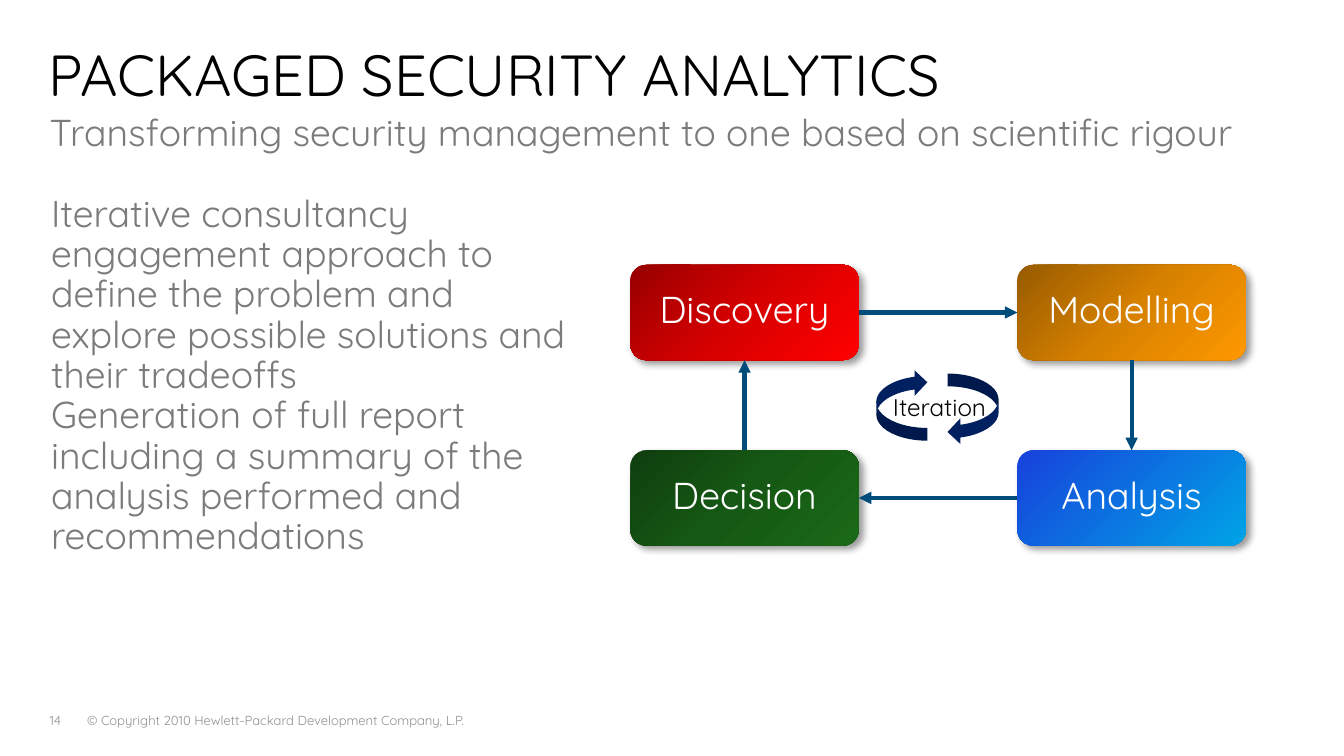
import pptx
import pptx.dml.color
import pptx.enum.shapes
import pptx.enum.text
import pptx.oxml
import pptx.oxml.ns
import pptx.util

EMU_PER_PX = 4572  # 200 px to the inch
FONT = "Quicksand"
COLOURS = {
    "title": "000000",
    "body": "7B7B79",
    "footer": "919191",
    "label": "FFFFFF",
    "connector": "004C7B",
    "cycle": "002060",
}
LINEAR = '<a:lin ang="2700000" scaled="0"/>'
RADIAL = '<a:path path="circle"><a:fillToRect l="100000" t="100000"/></a:path>'
BOX_WIDTH, BOX_HEIGHT = 340, 142
LEFT, RIGHT, UPPER, LOWER = 938, 1514, 394, 670
# Name, left, top, gradient colours, gradient direction; in cycle order
STAGES = [
    ("Discovery", LEFT, UPPER, ["970000", "D70000", "FF0000"], LINEAR),
    ("Modelling", RIGHT, UPPER, ["975B00", "D78100", "FF9900"], LINEAR),
    ("Analysis", RIGHT, LOWER, ["00A4E6", "1742DB"], RADIAL),
    ("Decision", LEFT, LOWER, ["0F3E0E", "165914", "1A6918"], LINEAR),
]
# Sides where each arrow leaves and arrives: 0 top, 1 left, 2 bottom, 3 right
ARROW_SIDES = [(3, 1), (2, 0), (1, 3), (0, 2)]


def px(*lengths):
    return [pptx.util.Emu(length * EMU_PER_PX) for length in lengths]


def rgb(name):
    return pptx.dml.color.RGBColor.from_string(COLOURS[name])


def drawing_xml(tag, content="", attributes=""):
    namespace = pptx.oxml.ns.nsdecls("a")
    return pptx.oxml.parse_xml(f"<a:{tag} {namespace} {attributes}>{content}</a:{tag}>")


def write_text(shape, text, size, colour, align="LEFT", anchor="TOP",
               line_spacing=1.0, wrap=True, plain_list=False):
    frame = shape.text_frame
    frame.word_wrap = wrap
    frame.auto_size = pptx.enum.text.MSO_AUTO_SIZE.NONE
    frame.vertical_anchor = getattr(pptx.enum.text.MSO_ANCHOR, anchor)
    frame.text = text
    for paragraph in frame.paragraphs:
        paragraph.alignment = getattr(pptx.enum.text.PP_ALIGN, align)
        paragraph.line_spacing = line_spacing
        paragraph.space_before = pptx.util.Pt(0)
        if plain_list:
            properties = paragraph._p.get_or_add_pPr()
            properties.set("marL", "0")
            properties.set("indent", "0")
            properties.append(drawing_xml("buNone"))
        for run in paragraph.runs:
            run.font.name = FONT
            run.font.size = pptx.util.Pt(size)
            run.font.color.rgb = rgb(colour)


def fill_placeholder(placeholder, bounds, text, **text_format):
    placeholder.left, placeholder.top, placeholder.width, placeholder.height = px(*bounds)
    write_text(placeholder, text, **text_format)


def add_label(slide, bounds, text, **text_format):
    write_text(slide.shapes.add_textbox(*px(*bounds)), text, **text_format)


def add_stage(slide, name, left, top, colours, direction):
    shape = slide.shapes.add_shape(
        pptx.enum.shapes.MSO_SHAPE.ROUNDED_RECTANGLE, *px(left, top, BOX_WIDTH, BOX_HEIGHT))
    shape.line.fill.background()

    # Gradient with evenly spaced stops
    step = 100000 // (len(colours) - 1)
    stops = "".join(f'<a:gs pos="{index * step}"><a:srgbClr val="{colour}"/></a:gs>'
                    for index, colour in enumerate(colours))
    shape.fill.gradient()
    properties = shape._element.spPr
    old_fill = properties.find(pptx.oxml.ns.qn("a:gradFill"))
    properties.replace(old_fill, drawing_xml(
        "gradFill", f"<a:gsLst>{stops}</a:gsLst>{direction}", 'rotWithShape="1"'))

    # Soft shadow to the lower right
    properties.append(drawing_xml(
        "effectLst",
        '<a:outerShdw blurRad="50800" dist="38100" dir="2700000" algn="tl" rotWithShape="0">'
        '<a:srgbClr val="000000"><a:alpha val="40000"/></a:srgbClr></a:outerShdw>'))
    write_text(shape, name, size=20, colour="label", align="CENTER",
               anchor="MIDDLE", line_spacing=0.85)
    return shape


def add_arrow(slide, source, source_side, target, target_side):
    connector = slide.shapes.add_connector(
        pptx.enum.shapes.MSO_CONNECTOR.STRAIGHT, 0, 0, 0, 0)
    connector.begin_connect(source, source_side)
    connector.end_connect(target, target_side)
    connector.line.color.rgb = rgb("connector")
    connector.line.width = pptx.util.Pt(2.25)
    connector.line._get_or_add_ln().append(drawing_xml("tailEnd", attributes='type="triangle"'))
    connector._element.spPr.append(drawing_xml("effectLst"))


def add_cycle_arrow(group, left, top, rotation):
    shape = group.shapes.add_shape(
        pptx.enum.shapes.MSO_SHAPE.CURVED_RIGHT_ARROW, *px(left, top, 76, 106))
    shape.rotation = rotation
    shape._element.spPr.xfrm.set("flipV", "1")
    shape.shadow.inherit = False
    shape.fill.solid()
    shape.fill.fore_color.rgb = rgb("cycle")
    shape.line.fill.background()


def main():
    presentation = pptx.Presentation()
    presentation.slide_width, presentation.slide_height = px(2000, 1125)
    slide = presentation.slides.add_slide(presentation.slide_layouts.get_by_name("Two Content"))
    title, subtitle, body = list(slide.placeholders)[:3]

    # Title, subtitle and description
    fill_placeholder(title, (52, 64, 1832, 110), "PACKAGED SECURITY ANALYTICS",
                     size=31, colour="title", line_spacing=pptx.util.Pt(31))
    fill_placeholder(subtitle, (54, 152, 1830, 88),
                     "Transforming security management to one based on scientific rigour",
                     size=20, colour="body", plain_list=True)
    fill_placeholder(body, (56, 280, 810, 726),
                     "Iterative consultancy engagement approach to define the problem and "
                     "explore possible solutions and their tradeoffs\n"
                     "Generation of full report including a summary of the analysis "
                     "performed and recommendations",
                     size=20, colour="body", line_spacing=0.9, plain_list=True)

    # Four stages joined in a loop
    stages = [add_stage(slide, *stage) for stage in STAGES]
    for index, (source_side, target_side) in enumerate(ARROW_SIDES):
        target = stages[(index + 1) % len(stages)]
        add_arrow(slide, stages[index], source_side, target, target_side)

    # Iteration symbol
    cycle = slide.shapes.add_group_shape()
    add_cycle_arrow(cycle, 1304, 550, 0)
    add_cycle_arrow(cycle, 1410, 556, 180)
    add_label(slide, (1298, 574, 200, 68), "Iteration",
              size=13, colour="title", align="CENTER", wrap=False)

    # Footer
    add_label(slide, (54, 1051, 84, 44), "14", size=7, colour="footer")
    add_label(slide, (110, 1051, 862, 38),
              "© Copyright 2010 Hewlett-Packard Development Company, L.P.",
              size=7, colour="footer")

    presentation.save("out.pptx")


if __name__ == "__main__":
    main()
